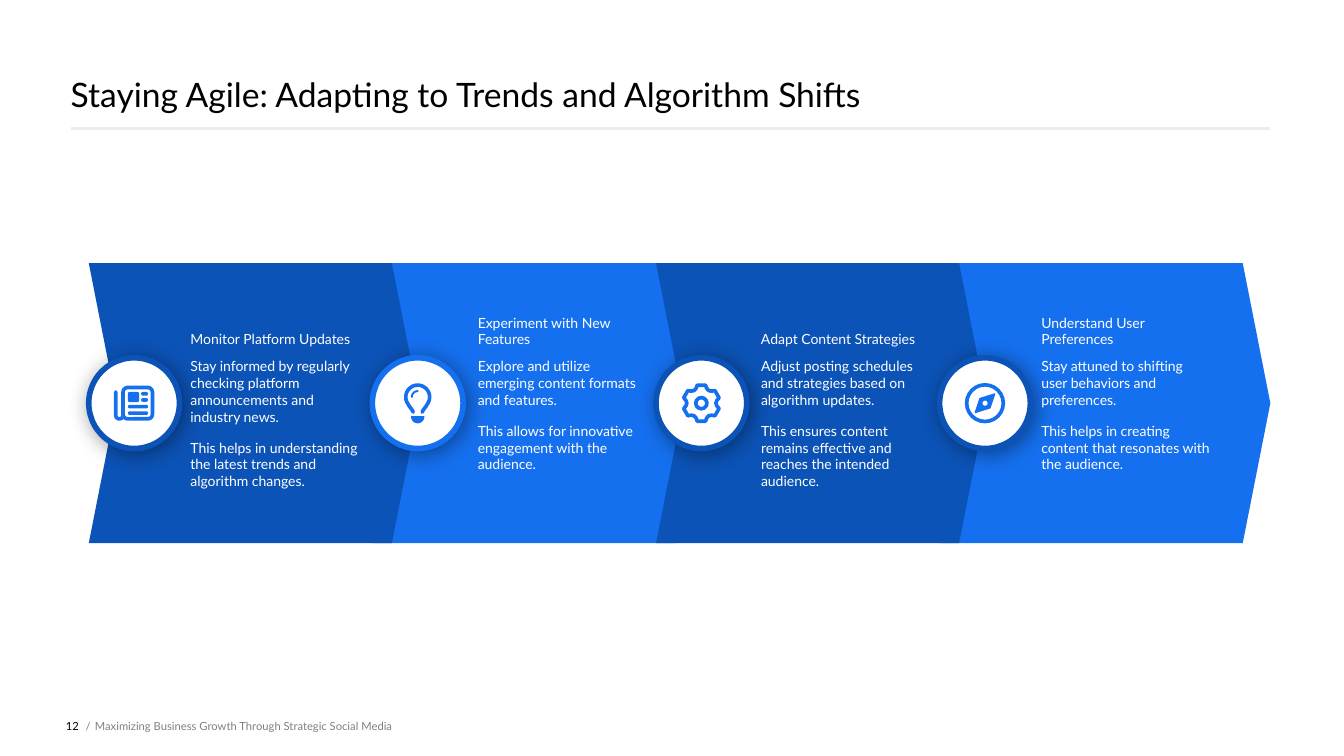
import math
from pptx import Presentation
from pptx import util as u
from pptx.dml.color import RGBColor
from pptx.enum import shapes, text
from pptx.oxml import parse_xml
from pptx.oxml.ns import nsdecls

Pt = u.Pt
KIND = shapes.MSO_SHAPE
ANCHOR = text.MSO_ANCHOR
COLORS = {"dark": "0C53B7", "blue": "1570EF", "white": "FFFFFF",
          "black": "000000", "gray": "808080", "rule": "EAECF0"}
STEPS = [
    ("Monitor Platform Updates",
     ["Stay informed by regularly checking platform announcements and industry news.",
      "This helps in understanding the latest trends and algorithm changes."],
     "dark", "dark", 136),
    ("Experiment with New Features",
     ["Explore and utilize emerging content formats and features.",
      "This allows for innovative engagement with the audience."],
     "blue", "blue", 341.3),
    ("Adapt Content Strategies",
     ["Adjust posting schedules and strategies based on algorithm updates.",
      "This ensures content remains effective and reaches the intended audience."],
     "dark", "dark", 543.6),
    ("Understand User Preferences",
     ["Stay attuned to shifting user behaviors and preferences.",
      "This helps in creating content that resonates with the audience."],
     "blue", "dark", 743.8),
]
PITCH, BADGE, STROKE = 202.6, 64.8, 2.6


def rgb(name):
    return RGBColor.from_string(COLORS[name])


def paint(sp, fill=None, line=None, width=STROKE):
    sp.shadow.inherit = False
    if fill:
        sp.fill.solid()
        sp.fill.fore_color.rgb = rgb(fill)
    else:
        sp.fill.background()
    if line:
        sp.line.color.rgb = rgb(line)
        sp.line.width = Pt(width)
    else:
        sp.line.fill.background()
    return sp


def add_preset(s, kind, box, **look):
    return paint(s.shapes.add_shape(kind, *map(Pt, box)), **look)


def add_outline(s, origin, points, close=True, **look):
    pts = [(Pt(origin[0] + x), Pt(origin[1] + y)) for x, y in points]
    builder = s.shapes.build_freeform(*pts[0])
    builder.add_line_segments(pts[1:], close=close)
    sp = paint(builder.convert_to_shape(), **look)
    if look.get("line"):
        ln = sp.line._get_or_add_ln()
        ln.set("cap", "rnd")
        ln.append(parse_xml(f"<a:round {nsdecls('a')}/>"))
    return sp


def add_text(s, box, paragraphs, size, color, anchor=ANCHOR.TOP, **fmt):
    tf = s.shapes.add_textbox(*map(Pt, box)).text_frame
    frame = {"word_wrap": True, "vertical_anchor": anchor, "margin_left": 0,
             "margin_right": 0, "margin_top": 0, "margin_bottom": 0}
    for key, value in frame.items():
        setattr(tf, key, value)
    for i, words in enumerate(paragraphs):
        p = tf.add_paragraph() if i else tf.paragraphs[0]
        for key, value in fmt.items():
            setattr(p, key, value)
        r = p.add_run()
        r.text = words
        for key, value in {"name": "Lato", "size": Pt(size)}.items():
            setattr(r.font, key, value)
        r.font.color.rgb = rgb(color)


def arc(cx, cy, radius, start, end, step=6):
    return [(cx + radius * math.cos(math.radians(a)),
             cy + radius * math.sin(math.radians(a)))
            for a in range(start, end + 1, step)]


def add_disc(s, x, y, radius, **look):
    box = (x - radius, y - radius, 2 * radius, 2 * radius)
    return add_preset(s, KIND.OVAL, box, **look)


def news_icon(s, x, y):
    frame = add_preset(s, KIND.ROUNDED_RECTANGLE, (x - 7.9, y - 11.2, 21, 22.4), line="blue")
    frame.adjustments[0] = 0.15
    tail = [(-13.1, -8)] + arc(-10.5, 8.6, 2.6, 0, 180)[::-1]
    add_outline(s, (x, y), tail, close=False, line="blue")
    for left, top, w, h, corner in [(-4.4, -8, 8, 7.2, 0.15), (5, -8, 5, 2.6, 0.5),
                                    (5, -3.6, 5, 2.6, 0.5), (-4.4, 1.2, 14.4, 2.6, 0.5),
                                    (-4.4, 5.8, 14.4, 2.6, 0.5)]:
        sp = add_preset(s, KIND.ROUNDED_RECTANGLE, (x + left, y + top, w, h), fill="blue")
        sp.adjustments[0] = corner


def bulb_icon(s, x, y):
    neck = [(-3.2, 6.4), (-4, 4.8), (-6, 2.2)]
    glass = neck + arc(0, -4.4, 8.5, 144, 396) + [(-a, b) for a, b in neck[::-1]]
    add_outline(s, (x, y), glass, close=False, line="blue")
    add_outline(s, (x, y), arc(0, -4.4, 4.2, 180, 270), close=False, line="blue", width=1.4)
    add_outline(s, (x, y), [(-4.7, 9.3), (4.7, 9.3)] + arc(0, 9.7, 4.7, 0, 180), fill="blue")


def gear_icon(s, x, y):
    teeth = [(r * math.cos(math.radians(a + d)), r * math.sin(math.radians(a + d)))
             for a in range(30, 390, 60)
             for d, r in [(-20, 11.2), (-13, 13.2), (13, 13.2), (20, 11.2), (30, 10.4)]]
    add_outline(s, (x, y), teeth, line="blue")
    add_disc(s, x, y, 4, line="blue")


def compass_icon(s, x, y):
    add_disc(s, x, y, 13.1, line="blue")
    needle = [(7, -6.7), (3.6, 3.4), (-7, 6.7), (-3.6, -3.4)]
    add_outline(s, (x, y), needle, fill="blue", line="blue", width=0.8)
    add_disc(s, x, y, 1.8, fill="white")


def add_header(s, box):
    x, y, w, h = box
    add_text(s, (x, y, w, h - 10), ["Staying Agile: Adapting to Trends and Algorithm Shifts"],
             24, "black", ANCHOR.BOTTOM)
    rule = s.shapes.add_connector(shapes.MSO_CONNECTOR.STRAIGHT,
                                  *map(Pt, (x, y + h, x + w, y + h)))
    rule.line.color.rgb = rgb("rule")
    rule.line.width = Pt(2)
    rule._element.spPr.append(parse_xml(f"<a:effectLst {nsdecls('a')}/>"))


def add_chevron(s, box, color):
    x, y, w, h = box
    tip = 19.7
    add_outline(s, (x, y), [(0, 0), (w - tip, 0), (w, h / 2), (w - tip, h), (0, h),
                            (tip, h / 2)], fill=color)


def add_badge(s, x, y, color, icon):
    sp = add_disc(s, x, y, BADGE / 2, fill="white", line=color, width=4)
    effects = sp._element.spPr.find(".//{*}effectLst")
    effects.append(parse_xml(
        f'<a:outerShdw {nsdecls("a")} blurRad="{Pt(15.8)}" dist="{Pt(3)}" dir="2700000" '
        f'algn="ctr" rotWithShape="0"><a:srgbClr val="{COLORS["black"]}">'
        '<a:alpha val="40000"/></a:srgbClr></a:outerShdw>'))
    icon(s, x, y)


def add_process(s, box):
    x, y, w, h = box
    mid = y + h / 2
    for i in (3, 1, 0, 2):
        add_chevron(s, (x + i * PITCH, y, w - 3 * PITCH, h), STEPS[i][2])
    icons = [news_icon, bulb_icon, gear_icon, compass_icon]
    for i, (heading, details, _, ring, left) in enumerate(STEPS):
        add_badge(s, x + i * PITCH + BADGE / 2, mid, ring, icons[i])
        add_text(s, (left, mid - 72, 122.4, 32.4), [heading], 10, "white", ANCHOR.BOTTOM)
        add_text(s, (left, mid - 32.4, 121.7, 104.4), details, 10, "white",
                 space_after=Pt(10))


def add_footer(s, box):
    x, y, w, h = box
    add_text(s, (x, y, 22.5, h), ["12"], 8, "black", ANCHOR.MIDDLE,
             alignment=text.PP_ALIGN.RIGHT)
    add_text(s, (x + 25.2, y, 8.6, h), [" /"], 8, "gray", ANCHOR.MIDDLE)
    add_text(s, (x + 33.9, y, w - 33.9, h),
             ["Maximizing Business Growth Through Strategic Social Media"],
             8, "gray", ANCHOR.MIDDLE)


def main():
    prs = Presentation()
    prs.slide_width, prs.slide_height = Pt(960), Pt(540)
    s = prs.slides.add_slide(prs.slide_layouts[6])
    add_header(s, (50.5, 0, 857, 91.6))
    add_process(s, (63.4, 188, 844, 200))
    add_footer(s, (33.9, 497, 654, 43))
    prs.save("out.pptx")


if __name__ == "__main__":
    main()
